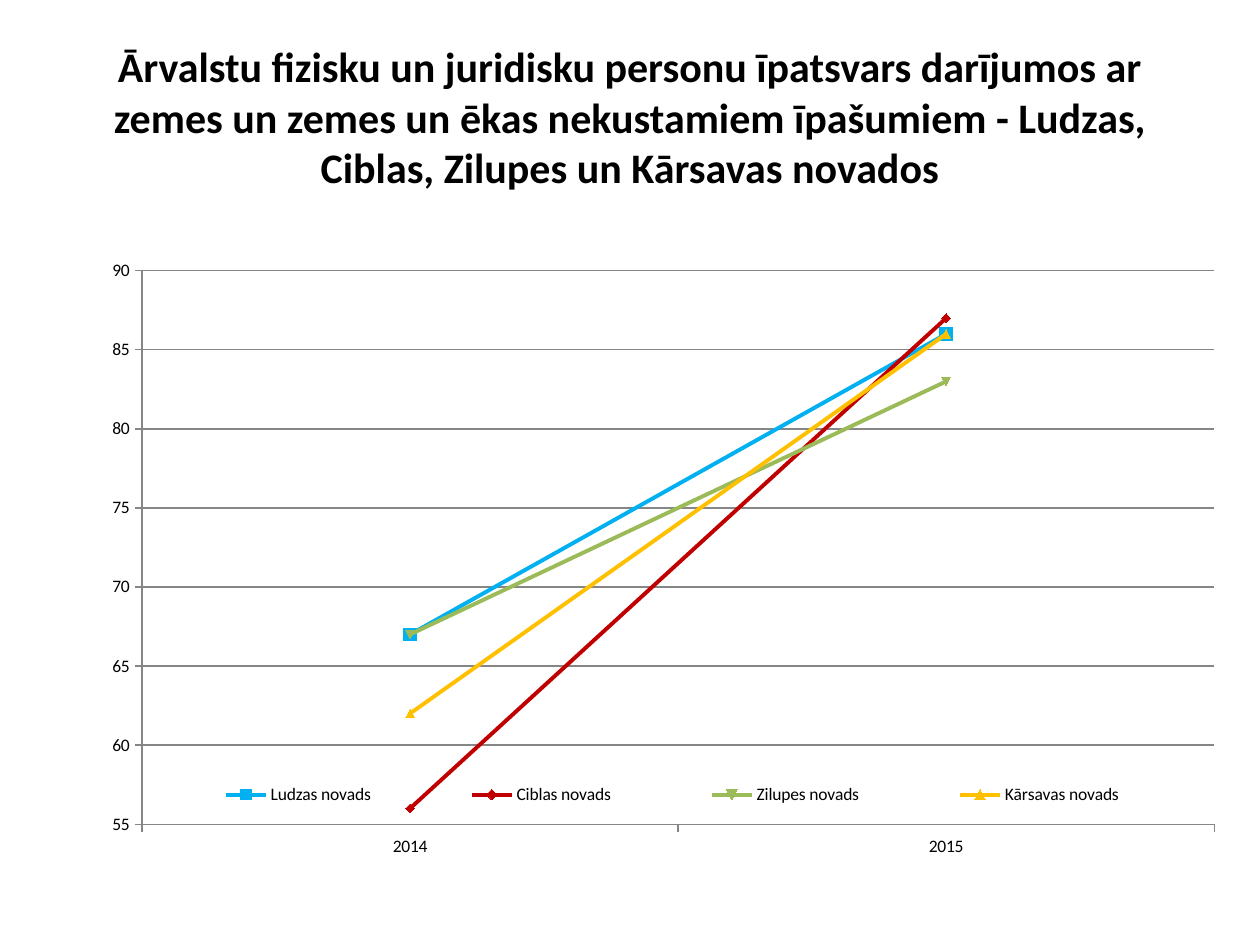
"""Build a title-and-line-chart slide on foreign buyers' share of property deals."""
from lxml import etree
from pptx import Presentation
from pptx.chart.data import CategoryChartData
from pptx.dml.color import RGBColor
from pptx.enum.chart import XL_CHART_TYPE, XL_LEGEND_POSITION, XL_MARKER_STYLE, XL_TICK_MARK
from pptx.enum.text import MSO_ANCHOR, PP_ALIGN
from pptx.oxml.ns import qn
from pptx.util import Pt

LINE_MARKERS = XL_CHART_TYPE.LINE_MARKERS
BOTTOM = XL_LEGEND_POSITION.BOTTOM
AUTOMATIC = XL_MARKER_STYLE.AUTOMATIC
OUTSIDE, NO_TICK = XL_TICK_MARK.OUTSIDE, XL_TICK_MARK.NONE
MIDDLE, CENTER = MSO_ANCHOR.MIDDLE, PP_ALIGN.CENTER

TITLE = (
    "Ārvalstu fizisku un juridisku personu īpatsvars darījumos ar zemes un zemes un "
    "ēkas nekustamiem īpašumiem - Ludzas, Ciblas, Zilupes un Kārsavas novados"
)
YEARS = ["2014", "2015"]
DISTRICTS = [
    ("Ludzas novads", (67, 86), "blue", 7),
    ("Ciblas novads", (56, 87), "red", 5),
    ("Zilupes novads", (67, 83), "green", 5),
    ("Kārsavas novads", (62, 86), "amber", 5),
]
COLORS = {
    "text": "000000", "axis": "868686", "blue": "00B0F0",
    "red": "C00000", "green": "9BBB59", "amber": "FFC000",
}
TITLE_BOX = {"left": Pt(36), "top": Pt(21.6), "width": Pt(648), "height": Pt(90)}
CHART_BOX = (Pt(48.24), Pt(139.68), Pt(658.8), Pt(376.56))
PLOT_SHARE = {"x": 0.05, "y": 0.04, "w": 0.93, "h": 0.84}
LEGEND_SHARE = {"x": 0.04, "y": 0.81, "w": 0.94, "h": 0.05}
TITLE_FONT = {"name": "Calibri", "size": Pt(24), "bold": True}
CHART_FONT = {"name": "Calibri", "size": Pt(10), "bold": False}
SHARE_AXIS = {
    "minimum_scale": 55, "maximum_scale": 90, "major_unit": 5, "has_major_gridlines": True,
}
TICKS = {"major_tick_mark": OUTSIDE, "minor_tick_mark": NO_TICK}


def assign(target, values):
    for key, value in values.items():
        setattr(target, key, value)


def rgb(color):
    return RGBColor.from_string(COLORS[color])


def set_font(font, values):
    assign(font, values)
    font.color.rgb = rgb("text")


def set_line(line, color, width):
    line.color.rgb = rgb(color)
    line.width = Pt(width)


def place(element, shares, inner=False):
    for old in element.findall(qn("c:layout")):
        element.remove(old)
    layout = etree.Element(qn("c:layout"))
    manual = etree.SubElement(layout, qn("c:manualLayout"))
    settings = {"layoutTarget": "inner"} if inner else {}
    settings |= {"xMode": "edge", "yMode": "edge"} | shares
    for tag, value in settings.items():
        etree.SubElement(manual, qn(f"c:{tag}")).set("val", str(value))
    element.insert(0 if inner else 1, layout)


def add_title(slide):
    title = slide.shapes.title
    assign(title, TITLE_BOX)
    frame = title.text_frame
    assign(frame, {"text": TITLE, "word_wrap": True, "vertical_anchor": MIDDLE})
    paragraph = frame.paragraphs[0]
    paragraph.alignment = CENTER
    set_font(paragraph.runs[0].font, TITLE_FONT)


def add_share_chart(slide):
    shares = CategoryChartData(number_format="0")
    shares.categories = YEARS
    for name, values, _, _ in DISTRICTS:
        shares.add_series(name, values)
    chart = slide.shapes.add_chart(LINE_MARKERS, *CHART_BOX, shares).chart
    assign(chart, {"has_title": False, "has_legend": True})
    set_font(chart.font, CHART_FONT)
    assign(chart.legend, {"position": BOTTOM, "include_in_layout": False})

    assign(chart.value_axis, SHARE_AXIS)
    assign(chart.value_axis.tick_labels, {"number_format": "0", "number_format_is_linked": False})
    set_line(chart.value_axis.major_gridlines.format.line, "axis", 0.75)
    for axis in (chart.value_axis, chart.category_axis):
        assign(axis, TICKS)
        set_line(axis.format.line, "axis", 0.75)

    plot = chart.plots[0]
    plot.vary_by_categories = False
    for series, (_, _, color, marker_size) in zip(plot.series, DISTRICTS):
        series.smooth = False
        set_line(series.format.line, color, 2.25)
        marker = series.marker
        assign(marker, {"style": AUTOMATIC, "size": marker_size})
        marker.format.fill.solid()
        marker.format.fill.fore_color.rgb = rgb(color)
        set_line(marker.format.line, color, 0.75)

    chart_part = chart.element.find(qn("c:chart"))
    place(chart_part.find(qn("c:plotArea")), PLOT_SHARE, inner=True)
    place(chart_part.find(qn("c:legend")), LEGEND_SHARE)


def main():
    deck = Presentation()
    assign(deck, {"slide_width": Pt(720), "slide_height": Pt(540)})
    slide = deck.slides.add_slide(deck.slide_layouts[5])
    add_title(slide)
    add_share_chart(slide)
    deck.save("out.pptx")


if __name__ == "__main__":
    main()
